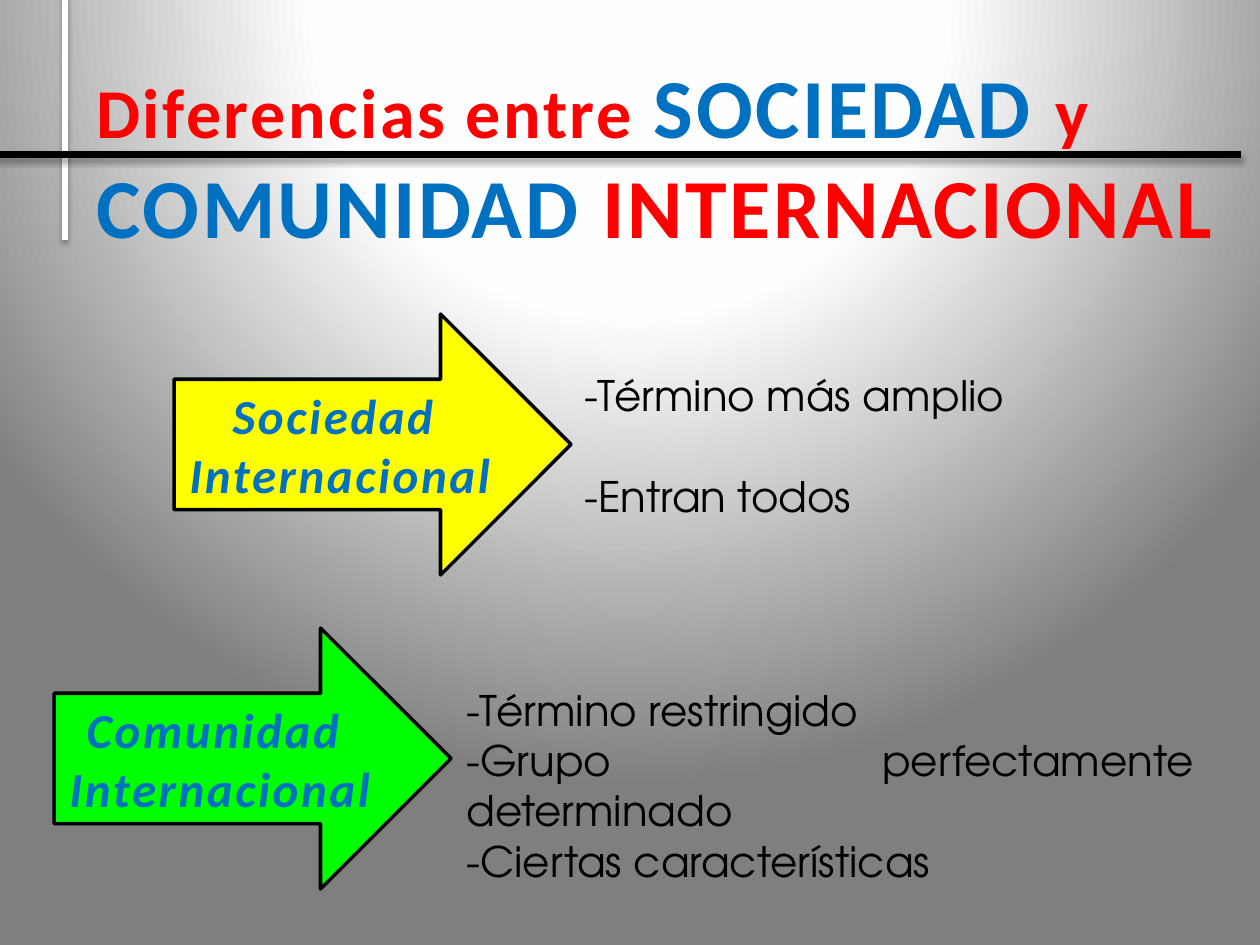
"""Build the slide on the differences between society and international community."""
from pptx import Presentation, oxml
from pptx import util as u
from pptx.dml.color import RGBColor
from pptx.enum import shapes, text

EMU_PER_PX = 914400 / 126
NS = 'xmlns:a="http://schemas.openxmlformats.org/drawingml/2006/main"'
RED, BLUE, BLACK, WHITE = "FF0000", "0070C0", "000000", "FFFFFF"
YELLOW, GREEN = "FFFF00", "00FF00"


def px(length):
    """Turn pixels into EMU."""
    return u.Emu(round(length * EMU_PER_PX))


def color(code):
    """Turn a hex string into a colour."""
    return RGBColor.from_string(code)


class Painter:
    """Holds the style and the current slide."""

    heading_font = "Calibri"
    body_font = "TeX Gyre Adventor"
    spacing = "150"

    def __init__(self, page):
        """Keep the slide to draw on."""
        self.page = page

    def background(self, stops):
        """Fill the background with a circular gradient."""
        self.page.background.fill.gradient()
        old = self.page.element.xpath(".//p:bgPr/a:gradFill")[0]
        marks = "".join(
            f'<a:gs pos="{share * 1000}"><a:srgbClr val="{code}"/></a:gs>'
            for share, code in stops)
        old.getparent().replace(old, oxml.parse_xml(
            f'<a:gradFill {NS} rotWithShape="1"><a:gsLst>{marks}</a:gsLst>'
            '<a:path path="circle"><a:fillToRect l="50000" t="-80000" '
            'r="50000" b="180000"/></a:path></a:gradFill>'))

    def rule(self, start, end, code, width):
        """Draw a straight line with a soft shadow below."""
        line = self.page.shapes.add_connector(
            shapes.MSO_CONNECTOR.STRAIGHT, *map(px, start + end))
        line.line.color.rgb = color(code)
        line.line.width = u.Pt(width)
        line.element.xpath("p:spPr")[0].append(oxml.parse_xml(
            f'<a:effectLst {NS}><a:outerShdw blurRad="{u.Pt(3.1)}" '
            f'dist="{u.Pt(1.8)}" dir="5400000" rotWithShape="0">'
            f'<a:srgbClr val="{BLACK}"><a:alpha val="35000"/></a:srgbClr>'
            '</a:outerShdw></a:effectLst>'))

    def add_span(self, para, words, size, code, font, bold=False, italic=False):
        """Add one run to a paragraph."""
        span = para.add_run()
        span.text = words
        span.font.name = font
        span.font.size = u.Pt(size)
        span.font.color.rgb = color(code)
        span.font.bold = bold
        span.font.italic = italic

    def space_letters(self, box):
        """Widen the letter spacing of every run in a shape."""
        for props in box.element.xpath(".//a:rPr"):
            props.set("spc", self.spacing)

    def text_box(self, place):
        """Add an empty wrapping text box."""
        box = self.page.shapes.add_textbox(*map(px, place))
        box.text_frame.word_wrap = True
        return box

    def title(self, place, runs):
        """Set the heading from words, size and colour."""
        box = self.text_box(place)
        para = box.text_frame.paragraphs[0]
        for words, size, code in runs:
            self.add_span(para, words, size, code, self.heading_font, bold=True)
        self.space_letters(box)

    def arrow(self, place, fill, lines):
        """Draw a labelled block arrow."""
        box = self.page.shapes.add_shape(
            shapes.MSO_SHAPE.RIGHT_ARROW, *map(px, place))
        box.shadow.inherit = False
        box.fill.solid()
        box.fill.fore_color.rgb = color(fill)
        box.line.color.rgb = color(BLACK)
        box.line.width = u.Pt(2)
        frame = box.text_frame
        frame.word_wrap = False
        frame.vertical_anchor = text.MSO_ANCHOR.TOP
        for index, words in enumerate(lines):
            para = frame.add_paragraph() if index else frame.paragraphs[0]
            para.alignment = text.PP_ALIGN.CENTER
            self.add_span(para, words, 28, BLUE, self.heading_font, True, True)
        self.space_letters(box)

    def points(self, place, lines, gap=0):
        """Set justified points with a gap between them."""
        frame = self.text_box(place).text_frame
        for index, words in enumerate(lines):
            para = frame.add_paragraph() if index else frame.paragraphs[0]
            para.alignment = text.PP_ALIGN.JUSTIFY
            para.space_before = u.Pt(gap if index else 0)
            self.add_span(para, words, 24, BLACK, self.body_font)


def main():
    """Build and save the deck."""
    deck = Presentation()
    deck.slide_width, deck.slide_height = px(1260), px(945)
    painter = Painter(deck.slides.add_slide(deck.slide_layouts[6]))
    painter.background([(0, WHITE), (40, "FEFEFE"), (100, "7F7F7F")])
    painter.rule((65, -4), (65, 240), WHITE, 3)
    painter.rule((1241, 155), (-5, 155), BLACK, 4)
    painter.title((84, 48, 1157, 217), [
        ("Diferencias entre ", 40, RED),
        ("SOCIEDAD ", 48, BLUE),
        ("y ", 40, RED),
        ("COMUNIDAD", 48, BLUE),
        (" INTERNACIONAL", 48, RED),
    ])
    painter.arrow((174, 314, 397, 261), YELLOW, ["Sociedad ", "Internacional"])
    painter.points((572, 363, 542, 165),
                   ["-Término más amplio", "-Entran todos"], gap=29)
    painter.arrow((54, 628, 397, 261), GREEN, ["Comunidad ", "Internacional"])
    painter.points((454, 678, 752, 165), [
        "-Término restringido ",
        "-Grupo perfectamente determinado",
        "-Ciertas características ",
    ])
    deck.save("out.pptx")


if __name__ == "__main__":
    main()
